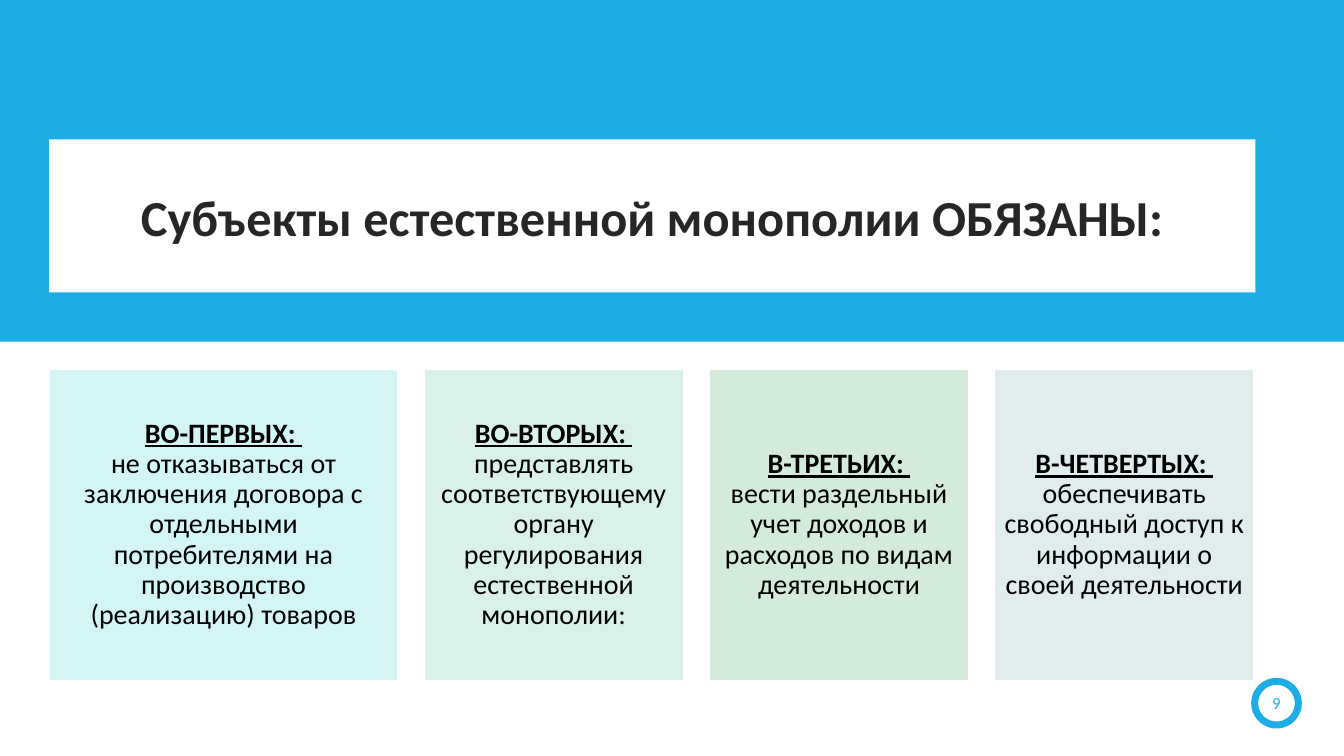
"""Build the slide on the duties of natural monopoly entities."""
from dataclasses import dataclass

import pptx
import pptx.dml.color
import pptx.enum.shapes
import pptx.enum.text
import pptx.shapes.autoshape
import pptx.slide
import pptx.text.text
import pptx.util

Cm = pptx.util.Cm
Pt = pptx.util.Pt
Shape = pptx.shapes.autoshape.Shape
ShapeKind = pptx.enum.shapes.MSO_SHAPE

COLOURS = {
    "accent": "1CADE4",
    "white": "FFFFFF",
    "title": "262626",
    "text": "000000",
    "first": "D3F5F6",
    "second": "D9F1EA",
    "third": "D4EBDB",
    "fourth": "E0EDEC",
}
SLIDE_WIDTH, SLIDE_HEIGHT = 33.87, 19.05
MARGIN_LEFT = 1.24
CARD_TOP, CARD_HEIGHT, CARD_GAP = 9.3, 7.85, 0.66


@dataclass
class Duty:
    heading: str
    body: str
    colour: str
    width: float = 6.53


DUTIES = [
    Duty("ВО-ПЕРВЫХ: ", "не отказываться от заключения договора с отдельными потребителями "
         "на производство (реализацию) товаров", "first", 8.79),
    Duty("ВО-ВТОРЫХ: ", "представлять соответствующему органу регулирования "
         "естественной монополии:", "second"),
    Duty("В-ТРЕТЬИХ: ", "вести раздельный учет доходов и расходов по видам деятельности", "third"),
    Duty("В-ЧЕТВЕРТЫХ: ", "обеспечивать свободный доступ к информации о своей деятельности",
         "fourth"),
]


def rgb(name: str) -> pptx.dml.color.RGBColor:
    return pptx.dml.color.RGBColor.from_string(COLOURS[name])


def paint(shape: Shape, fill: str, line: str = "", line_width: float = 1) -> None:
    shape.fill.solid()
    shape.fill.fore_color.rgb = rgb(fill)
    if line:
        shape.line.color.rgb = rgb(line)
        shape.line.width = Pt(line_width)
    else:
        shape.line.fill.background()


def add_block(slide: pptx.slide.Slide, kind: ShapeKind, left: float, top: float,
              width: float, height: float) -> Shape:
    shape = slide.shapes.add_shape(kind, Cm(left), Cm(top), Cm(width), Cm(height))
    shape.shadow.inherit = False
    return shape


def write(shape: Shape, text: str, size: float, colour: str,
          bold: bool = False) -> pptx.text.text._Paragraph:
    frame = shape.text_frame
    frame.text = text
    frame.word_wrap = True
    frame.auto_size = pptx.enum.text.MSO_AUTO_SIZE.NONE
    frame.vertical_anchor = pptx.enum.text.MSO_ANCHOR.MIDDLE
    paragraph = frame.paragraphs[0]
    paragraph.alignment = pptx.enum.text.PP_ALIGN.CENTER
    for run in paragraph.runs:
        run.font.name = "Calibri"
        run.font.size = Pt(size)
        run.font.bold = bold
        run.font.color.rgb = rgb(colour)
    return paragraph


def set_insets(shape: Shape, inset: float) -> None:
    frame = shape.text_frame
    frame.margin_left = frame.margin_right = Cm(inset)
    frame.margin_top = frame.margin_bottom = Cm(inset)


def add_title(slide: pptx.slide.Slide) -> None:
    band = add_block(slide, ShapeKind.RECTANGLE, 0, 0, SLIDE_WIDTH, 8.61)
    paint(band, "accent")
    title = slide.shapes.title
    band.element.addnext(title.element)
    title.left, title.top = Cm(MARGIN_LEFT), Cm(3.51)
    title.width, title.height = Cm(30.4), Cm(3.86)
    paint(title, "white")
    write(title, "Субъекты естественной монополии ОБЯЗАНЫ:", 36, "title", bold=True)


def add_duty(slide: pptx.slide.Slide, duty: Duty, left: float) -> None:
    card = add_block(slide, ShapeKind.RECTANGLE, left, CARD_TOP, duty.width, CARD_HEIGHT)
    paint(card, duty.colour, "white")
    paragraph = write(card, f"{duty.heading}\v{duty.body}", 20, "text")
    set_insets(card, 0.2)
    paragraph.line_spacing = 0.9
    heading = paragraph.runs[0]
    heading.font.bold = True
    heading.font.underline = True


def add_page_number(slide: pptx.slide.Slide) -> None:
    badge = add_block(slide, ShapeKind.OVAL, 31.62, 17.17, 1.1, 1.1)
    paint(badge, "white", "accent", 5)
    write(badge, "9", 12, "accent")
    set_insets(badge, 0)


def main() -> None:
    presentation = pptx.Presentation()
    presentation.slide_width = Cm(SLIDE_WIDTH)
    presentation.slide_height = Cm(SLIDE_HEIGHT)
    slide = presentation.slides.add_slide(presentation.slide_layouts[5])
    add_title(slide)
    left = MARGIN_LEFT
    for duty in DUTIES:
        add_duty(slide, duty, left)
        left += duty.width + CARD_GAP
    add_page_number(slide)
    presentation.save("out.pptx")


if __name__ == "__main__":
    main()
